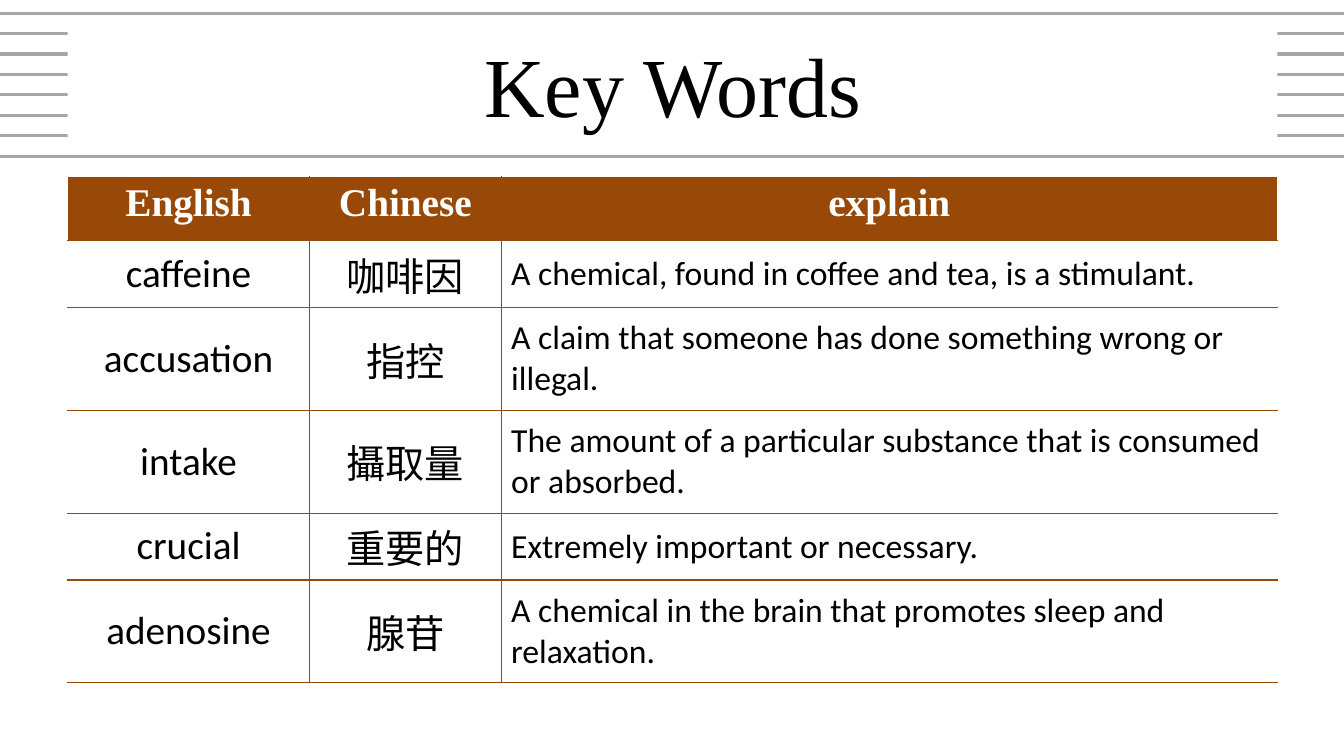
from dataclasses import dataclass

from lxml.etree import SubElement
from pptx import Presentation
from pptx.dml.color import RGBColor
from pptx.enum.shapes import MSO_CONNECTOR as Connector, MSO_SHAPE as Shape
from pptx.enum.text import MSO_ANCHOR as Anchor, PP_ALIGN as Align
from pptx.oxml.ns import qn
from pptx.util import Inches, Pt


@dataclass(frozen=True)
class Theme:
    """Colours, fonts and type sizes of the slide."""
    white: str = "FFFFFF"
    black: str = "000000"
    brown: str = "984807"
    grey: str = "A6A6A6"
    serif: str = "Times New Roman"
    sans: str = "Calibri"
    chinese: str = "Noto Sans CJK SC"
    title: int = 60
    word: int = 28
    meaning: int = 24
    stripe: float = 2.25
    border: int = 1


HEADINGS = ("English", "Chinese", "explain")
KEY_WORDS = (
    ("caffeine", "咖啡因", "A chemical, found in coffee and tea, is a stimulant."),
    ("accusation", "指控", "A claim that someone has done something wrong or illegal."),
    ("intake", "攝取量", "The amount of a particular substance that is consumed or absorbed."),
    ("crucial", "重要的", "Extremely important or necessary."),
    ("adenosine", "腺苷", "A chemical in the brain that promotes sleep and relaxation."),
)
COLUMN_WIDTHS = (2.4, 1.9, 7.7)
ROW_HEIGHTS = (0.64, 0.64, 1.02, 1.02, 0.64, 1.02)


def write(frame, text, *, font, size, color, bold=False, align=Align.CENTER):
    """Put one formatted paragraph into a text frame."""
    para = frame.paragraphs[0]
    para.alignment = align
    span = para.add_run()
    span.text = text
    span.font.size = Pt(size)
    span.font.bold = bold
    span.font.color.rgb = RGBColor.from_string(color)
    span.font.name = font
    SubElement(span.font._element, qn("a:ea"), typeface=font)


class Page:
    """The current slide and the style it is drawn in."""

    def __init__(self, deck, theme):
        """Add a blank slide to the deck."""
        self.slide = deck.slides.add_slide(deck.slide_layouts[6])
        self.theme = theme

    def stripe(self, top):
        """Draw a grey line across the slide."""
        line = self.slide.shapes.add_connector(
            Connector.STRAIGHT, Inches(-0.11), Inches(top), Inches(13.41), Inches(top))
        line.line.color.rgb = RGBColor.from_string(self.theme.grey)
        line.line.width = Pt(self.theme.stripe)
        SubElement(line._element.spPr, qn("a:effectLst"))

    def title(self, text, left, top, width, height):
        """Draw the title on a white panel."""
        theme = self.theme
        box = self.slide.shapes.add_shape(
            Shape.RECTANGLE, Inches(left), Inches(top), Inches(width), Inches(height))
        box.shadow.inherit = False
        box.fill.solid()
        box.fill.fore_color.rgb = RGBColor.from_string(theme.white)
        box.line.fill.background()
        box.text_frame.word_wrap = True
        box.text_frame.vertical_anchor = Anchor.MIDDLE
        write(box.text_frame, text, font=theme.serif, size=theme.title, color=theme.black)

    def cell(self, cell, fill, anchor, edges):
        """Set the fill, anchor and four borders of a table cell."""
        properties = cell._tc.get_or_add_tcPr()
        for side, color in zip("LRTB", edges):
            line = SubElement(properties, qn(f"a:ln{side}"), w=str(Pt(self.theme.border)))
            SubElement(SubElement(line, qn("a:solidFill")), qn("a:srgbClr"), val=color)
        cell.fill.solid()
        cell.fill.fore_color.rgb = RGBColor.from_string(fill)
        cell.vertical_anchor = anchor

    def table(self, rows, left, top):
        """Draw the word table with its header row."""
        theme = self.theme
        grid = self.slide.shapes.add_table(
            len(rows), len(COLUMN_WIDTHS), Inches(left), Inches(top),
            Inches(sum(COLUMN_WIDTHS)), Inches(sum(ROW_HEIGHTS))).table
        grid.horz_banding = False
        for column, width in zip(grid.columns, COLUMN_WIDTHS):
            column.width = Inches(width)
        for row, height in zip(grid.rows, ROW_HEIGHTS):
            row.height = Inches(height)
        header = dict(font=theme.serif, size=theme.word, color=theme.white, bold=True)
        body = (
            dict(font=theme.sans, size=theme.word, color=theme.black),
            dict(font=theme.chinese, size=theme.word, color=theme.black),
            dict(font=theme.sans, size=theme.meaning, color=theme.black, align=Align.LEFT),
        )
        last = len(COLUMN_WIDTHS) - 1
        for r, texts in enumerate(rows):
            for c, text in enumerate(texts):
                outer = (c == 0, c == last, r == 0, False)
                edges = [theme.white if edge else theme.brown for edge in outer]
                cell = grid.cell(r, c)
                fill, anchor = (theme.white, Anchor.MIDDLE) if r else (theme.brown, Anchor.TOP)
                self.cell(cell, fill, anchor, edges)
                write(cell.text_frame, text, **(body[c] if r else header))


def main():
    """Build the key words slide."""
    deck = Presentation()
    deck.slide_width, deck.slide_height = Inches(13.33), Inches(7.5)
    page = Page(deck, Theme())
    first, last, count = 0.13, 1.55, 8
    for index in range(count):
        page.stripe(first + index * (last - first) / (count - 1))
    page.title("Key Words", 0.67, 0.28, 12, 1.11)
    page.table((HEADINGS, *KEY_WORDS), 0.67, 1.75)
    deck.save("out.pptx")


if __name__ == "__main__":
    main()
